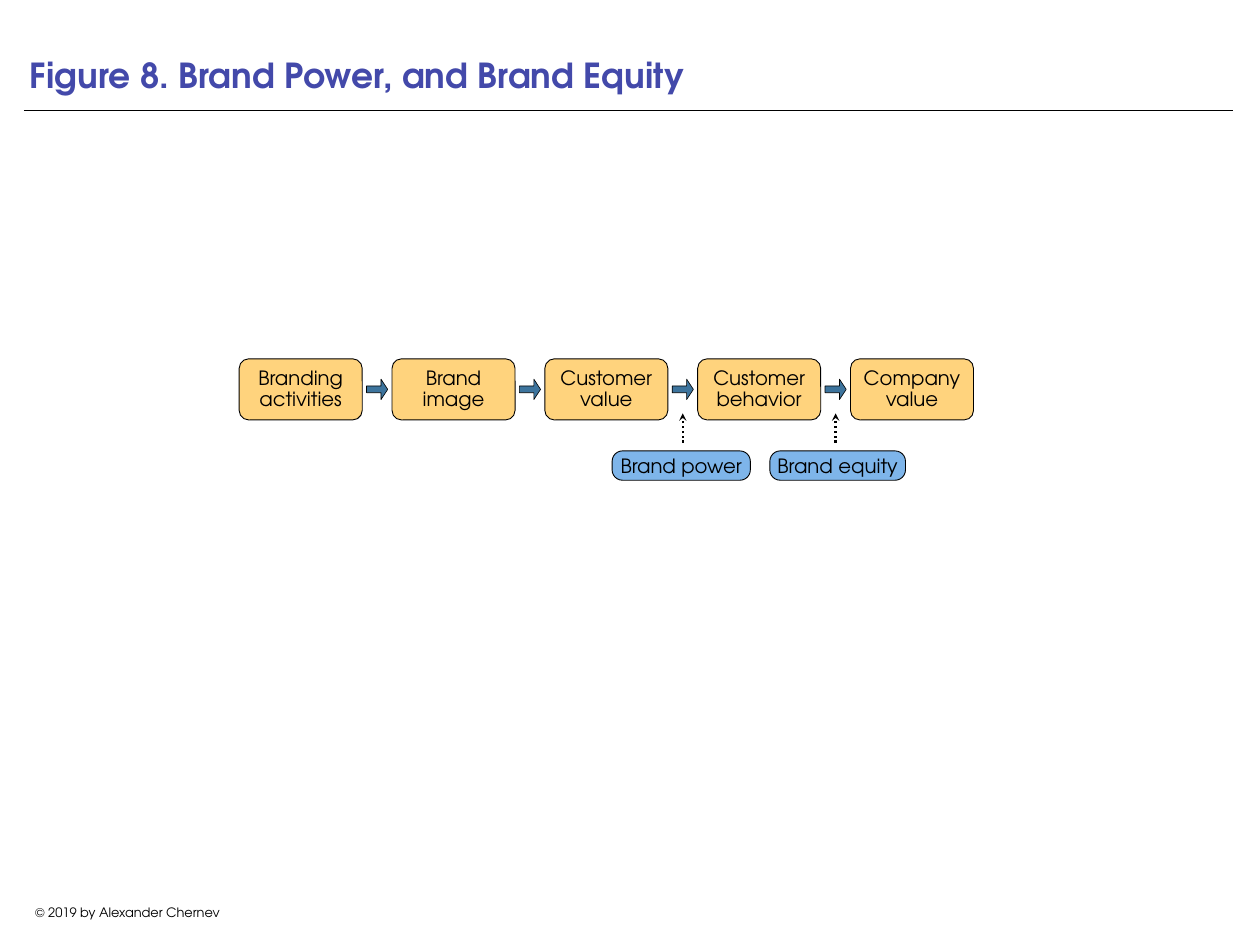
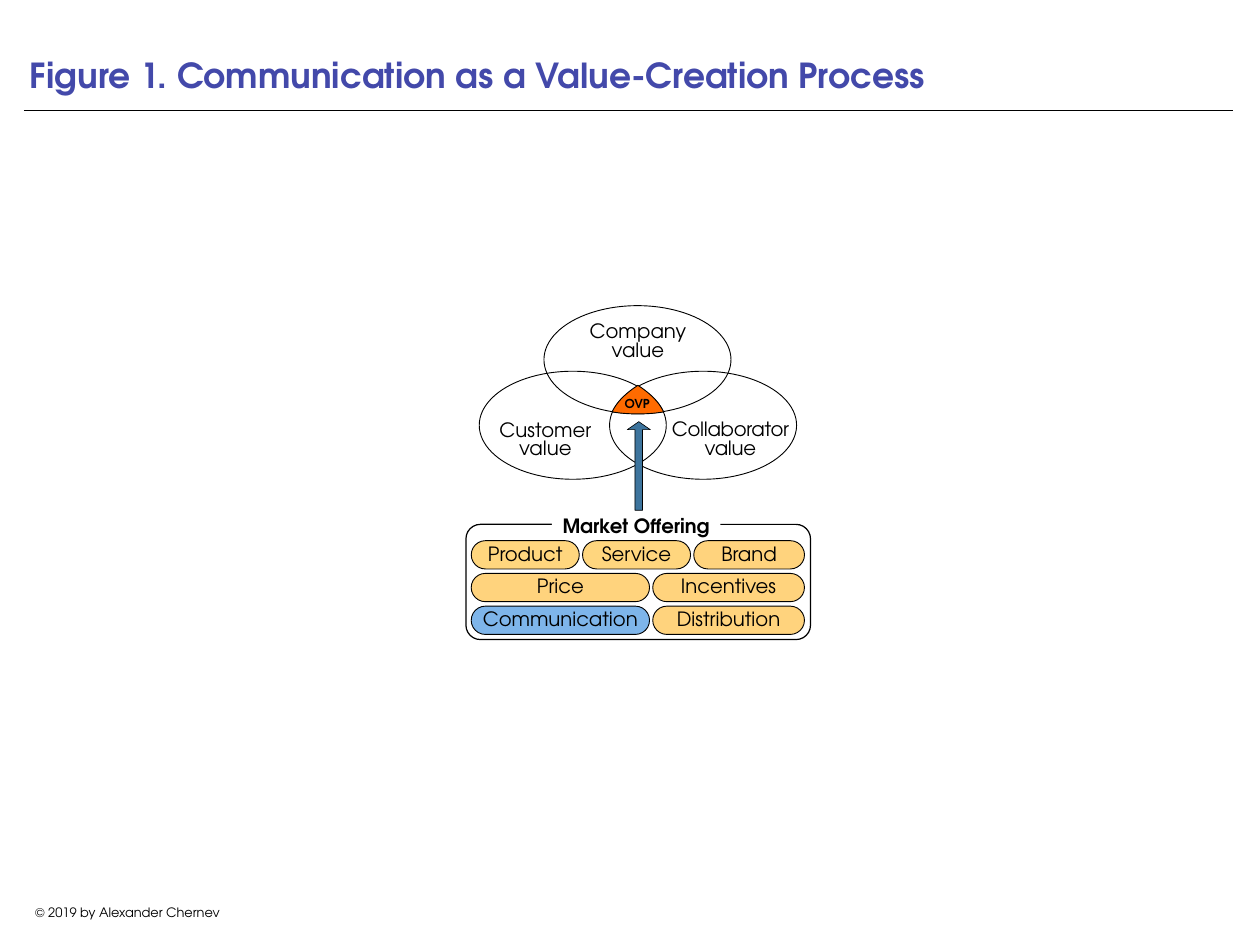
import lxml.etree
import pptx
import pptx.dml.color
import pptx.enum.dml
import pptx.enum.shapes
import pptx.enum.text
import pptx.oxml.ns
import pptx.util

Pt = pptx.util.Pt
SHAPE = pptx.enum.shapes.MSO_SHAPE
ALIGN = pptx.enum.text.PP_ALIGN
ANCHOR = pptx.enum.text.MSO_ANCHOR

FONT = "TeX Gyre Adventor"
COLORS = {
    "ink": "000000",
    "paper": "FFFFFF",
    "title": "4349AA",
    "amber": "FFD37D",
    "light amber": "FFD67E",
    "sky": "7EB5EA",
    "arrow": "3D749D",
    "orange": "FF6B00",
}
MARGIN, CONTENT_WIDTH = 19.4, 982.4


def rgb(name):
    return pptx.dml.color.RGBColor.from_string(COLORS[name])


def write(frame, text, size=16, bold=False, color="ink", align=ALIGN.CENTER,
          anchor=ANCHOR.MIDDLE, spacing=None, inset=0, tracking=None):
    """Fill a text frame and format all its runs alike."""
    frame.text = text
    frame.word_wrap = True
    frame.vertical_anchor = anchor
    frame.margin_left = frame.margin_right = Pt(inset)
    frame.margin_top = frame.margin_bottom = Pt(inset)
    for paragraph in frame.paragraphs:
        paragraph.alignment = align
        paragraph.line_spacing = spacing
        for run in paragraph.runs:
            run.font.name = FONT
            run.font.size = Pt(size)
            run.font.bold = bold
            run.font.color.rgb = rgb(color)
            if tracking is not None:
                run.font._element.set("spc", str(tracking))


def paint(shape, fill=None, line=None):
    """Set fill colour and line width; None means no fill or no line."""
    shape.shadow.inherit = False
    if fill:
        shape.fill.solid()
        shape.fill.fore_color.rgb = rgb(fill)
    else:
        shape.fill.background()
    if line:
        shape.line.color.rgb = rgb("ink")
        shape.line.width = Pt(line)
    else:
        shape.line.fill.background()


def add_shape(slide, kind, left, top, width, height, fill=None, line=0.75,
              adjustments=()):
    shape = slide.shapes.add_shape(kind, Pt(left), Pt(top), Pt(width), Pt(height))
    paint(shape, fill, line)
    for index, value in enumerate(adjustments):
        shape.adjustments[index] = value
    return shape


def add_box(slide, text, left, top, width, height, fill, corner, **style):
    box = add_shape(slide, SHAPE.ROUNDED_RECTANGLE, left, top, width, height,
                    fill, adjustments=[corner])
    write(box.text_frame, text, **style)


def add_label(slide, text, left, top, width, height, **style):
    label = slide.shapes.add_textbox(Pt(left), Pt(top), Pt(width), Pt(height))
    write(label.text_frame, text, **style)
    return label


def add_line(slide, x1, y1, x2, y2, width):
    line = slide.shapes.add_connector(pptx.enum.shapes.MSO_CONNECTOR.STRAIGHT,
                                      Pt(x1), Pt(y1), Pt(x2), Pt(y2))
    line.line.color.rgb = rgb("ink")
    line.line.width = Pt(width)
    lxml.etree.SubElement(line._element.spPr, pptx.oxml.ns.qn("a:effectLst"))
    return line


def add_pointer(slide, x, bottom, top):
    pointer = add_line(slide, x, bottom, x, top, 2)
    pointer.line.dash_style = pptx.enum.dml.MSO_LINE.ROUND_DOT
    lxml.etree.SubElement(pointer.line._get_or_add_ln(),
                          pptx.oxml.ns.qn("a:tailEnd"), type="stealth")


def bezier(start, control1, control2, end, steps=12):
    """Points along a cubic curve, without its start."""
    points = []
    for step in range(1, steps + 1):
        t = step / steps
        weights = ((1 - t) ** 3, 3 * t * (1 - t) ** 2, 3 * t * t * (1 - t), t ** 3)
        points.append(tuple(
            sum(w * p[axis] for w, p in zip(weights, (start, control1, control2, end)))
            for axis in (0, 1)))
    return points


def add_figure_slide(deck, title):
    """Slide with the shared title, rule and copyright line."""
    slide = deck.slides.add_slide(deck.slide_layouts[5])
    heading = slide.shapes.title
    heading.left, heading.top = Pt(MARGIN), Pt(0)
    heading.width, heading.height = Pt(CONTENT_WIDTH), Pt(82.8)
    write(heading.text_frame, title, size=28, bold=True, color="title",
          align=ALIGN.LEFT, anchor=ANCHOR.BOTTOM, inset=5)
    add_line(slide, MARGIN, 89.3, MARGIN + CONTENT_WIDTH, 89.3, 0.5)
    notice = add_label(slide, "© 2019 by Alexander Chernev", MARGIN, 731.5, 168.5, 20,
                       size=10.5, anchor=ANCHOR.TOP, inset=3.6)
    notice.text_frame.word_wrap = False
    return slide


def draw_brand_chain(slide):
    left, top, width, height, gap = 194.4, 291.6, 100, 49.7, 24.2
    arrow_width, arrow_height = 17.2, 16.6
    stages = ["Branding activities", "Brand\nimage", "Customer value",
              "Customer behavior", "Company value"]
    gap_centers = []

    # Stages with an arrow in each gap
    for index, stage in enumerate(stages):
        x = left + index * (width + gap)
        add_box(slide, stage, x, top, width, height, "amber", 0.156, spacing=0.9)
        if index < len(stages) - 1:
            center = x + width + gap / 2
            gap_centers.append(center)
            add_shape(slide, SHAPE.RIGHT_ARROW, center - arrow_width / 2,
                      top + (height - arrow_height) / 2, arrow_width, arrow_height,
                      "arrow", 0.5, [0.329, 0.329])

    # Callouts below the last two gaps
    callouts = [("Brand power", 497.5, 112.3), ("Brand equity", 625.7, 110.2)]
    for (text, x, callout_width), center in zip(callouts, gap_centers[-2:]):
        add_box(slide, text, x, 366.5, callout_width, 23.8, "sky", 0.352,
                spacing=0.8, anchor=ANCHOR.BOTTOM)
        add_pointer(slide, center, 360, 336)


def draw_value_circles(slide):
    # Ellipse corner, then label text, box and tracking
    values = [
        ((389.5, 301.7), "Customer value", (391, 329.8, 104.4, 56.9), None),
        ((495.4, 301.7), "Collaborator value", (545, 333.4, 97.2, 49), -20),
        ((442.1, 248.4), "Company\vvalue", (455.8, 257, 125.3, 42.5), None),
    ]
    for (x, y), text, label_box, tracking in values:
        add_label(slide, text, *label_box, spacing=0.8, tracking=tracking)
        add_shape(slide, SHAPE.OVAL, x, y, 152, 87.8)

    # Shared centre of the three ellipses
    left, apex, right = (497.5, 334.8), (518.4, 313.2), (539.3, 334.8)
    outline = (bezier(left, (501.1, 326.9), (508.3, 319.7), apex)
               + bezier(apex, (528.5, 319.7), (535.7, 326.9), right)
               + bezier(right, (526.3, 337), (510.5, 337), left))
    builder = slide.shapes.build_freeform(Pt(left[0]), Pt(left[1]))
    builder.add_line_segments([(Pt(x), Pt(y)) for x, y in outline], close=True)
    paint(builder.convert_to_shape(), "orange", 0.75)
    add_label(slide, "OVP", 507.6, 321.1, 33, 14.4, size=10, bold=True,
              align=ALIGN.LEFT)


def draw_market_offering(slide):
    add_shape(slide, SHAPE.ROUNDED_RECTANGLE, 378.7, 426.2, 280, 93.6,
              line=1, adjustments=[0.125])

    # Rows of pills: text, width, fill
    left, top, height, pitch, gap = 383, 439.4, 23, 26.6, 2.6
    rows = [
        [("Product", 87.8, "light amber"), ("Service", 87.8, "light amber"),
         ("Brand", 90, "amber")],
        [("Price", 144.9, "amber"), ("Incentives", 123.3, "amber")],
        [("Communication", 144.9, "sky"), ("Distribution", 123.3, "amber")],
    ]
    for index, row in enumerate(rows):
        x = left
        for text, width, fill in row:
            add_box(slide, text, x, top + index * pitch, width, height, fill, 0.5,
                    spacing=0.8, anchor=ANCHOR.BOTTOM)
            x += width + gap

    # Heading that interrupts the frame
    heading = add_shape(slide, SHAPE.RECTANGLE, 448.6, 415.4, 136.8, 23,
                        "paper", None)
    write(heading.text_frame, "Market Offering", bold=True)

    # Arrow up to the shared centre
    add_shape(slide, SHAPE.UP_ARROW, 509.8, 342.7, 18.7, 72, "arrow", 0.5,
              [0.329, 0.347])


def main():
    deck = pptx.Presentation()
    deck.slide_width, deck.slide_height = Pt(1024), Pt(768)

    draw_brand_chain(add_figure_slide(deck, "Figure 8. Brand Power, and Brand Equity"))

    communication = add_figure_slide(
        deck, "Figure 1. Communication as a Value-Creation Process")
    draw_value_circles(communication)
    draw_market_offering(communication)

    deck.save("out.pptx")


if __name__ == "__main__":
    main()
